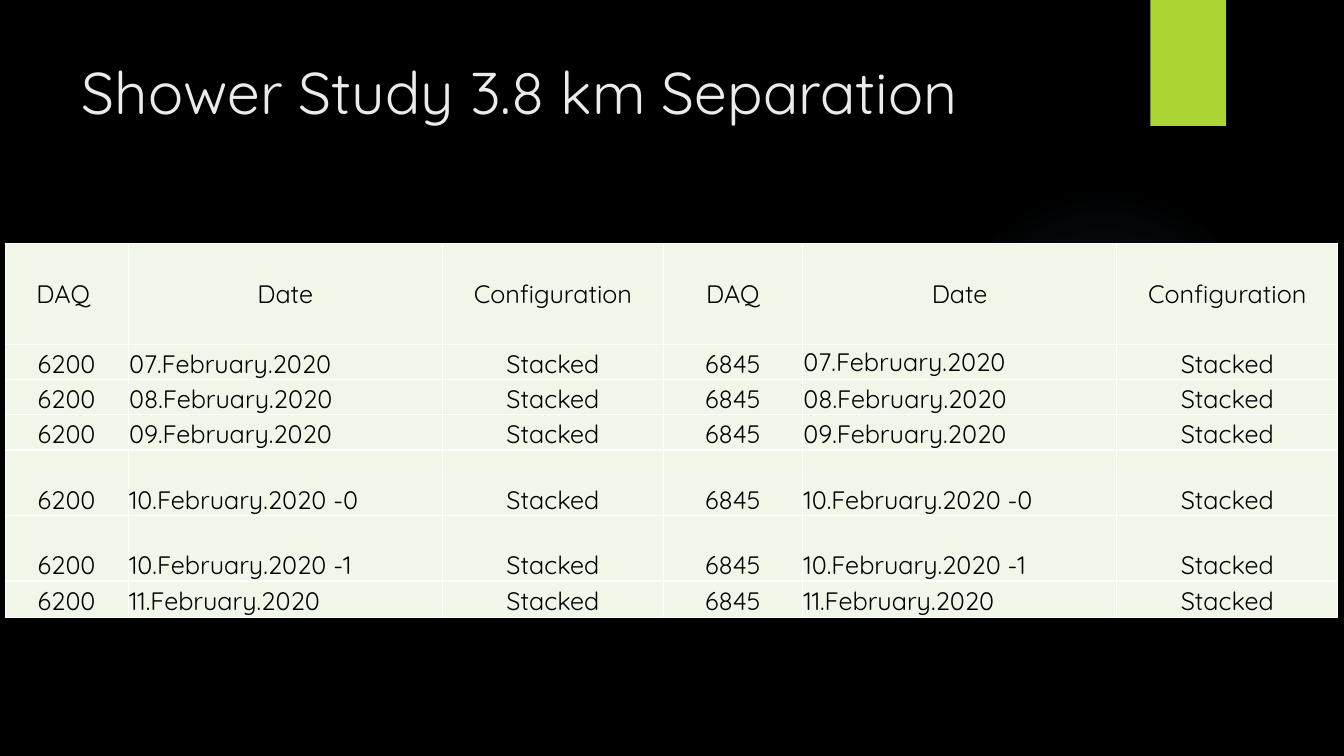
from lxml import etree
from pptx import Presentation
from pptx.dml.color import RGBColor
from pptx.enum.shapes import MSO_SHAPE
from pptx.enum.text import MSO_ANCHOR, PP_ALIGN
from pptx.oxml import parse_xml
from pptx.oxml.ns import nsdecls
from pptx.util import Inches, Pt

ELLIPSE, RECTANGLE = MSO_SHAPE.OVAL, MSO_SHAPE.RECTANGLE
TOP, MIDDLE, BOTTOM = MSO_ANCHOR.TOP, MSO_ANCHOR.MIDDLE, MSO_ANCHOR.BOTTOM
LEFT, CENTER = PP_ALIGN.LEFT, PP_ALIGN.CENTER
TITLE_ONLY = 5

HEADERS = ["DAQ ", "Date", "Configuration", "DAQ", "Date", "Configuration"]
DETECTORS = ["6200", "6845"]
DATES = [
    "07.February.2020",
    "08.February.2020",
    "09.February.2020",
    "10.February.2020 -0",
    "10.February.2020 -1",
    "11.February.2020",
]
DATE_COLUMNS = (1, 4)
COLUMN_SHARES = [9.15, 23.4, 16.43, 10.35, 23.4, 16.43]
ROW_SHARES = [13.33, 4.67, 4.67, 4.67, 8.67, 8.67, 4.8]


def color(value):
    return RGBColor.from_string(value)


class SlideBuilder:
    font_name = "Quicksand"
    background = "000000"
    title_color = "EBEBEB"
    accent = "ACD433"
    glow_color = "7AC4F0"
    cell_color = "F1F7E8"
    border_color = "FFFFFF"
    text_color = "000000"

    def __init__(self, deck):
        self.deck = deck
        self.slide = deck.slides.add_slide(deck.slide_layouts[TITLE_ONLY])
        fill = self.slide.background.fill
        fill.solid()
        fill.fore_color.rgb = color(self.background)

    def across(self, share):
        return round(self.deck.slide_width * share / 100)

    def down(self, share):
        return round(self.deck.slide_height * share / 100)

    def area(self, left, top, width, height):
        return self.across(left), self.down(top), self.across(width), self.down(height)

    def shape(self, kind, *shares):
        shape = self.slide.shapes.add_shape(kind, *self.area(*shares))
        shape.shadow.inherit = False
        shape.line.fill.background()
        return shape

    def block(self, *shares):
        fill = self.shape(RECTANGLE, *shares).fill
        fill.solid()
        fill.fore_color.rgb = color(self.accent)

    def glow(self, stops, *shares):
        shape = self.shape(ELLIPSE, *shares)
        marks = "".join(
            f'<a:gs pos="{place * 1000}"><a:srgbClr val="{self.glow_color}">'
            f'<a:alpha val="{alpha * 1000}"/></a:srgbClr></a:gs>'
            for place, alpha in stops
        )
        gradient = parse_xml(
            f'<a:gradFill {nsdecls("a")} rotWithShape="1"><a:gsLst>{marks}</a:gsLst>'
            '<a:path path="circle"><a:fillToRect l="50000" t="50000" r="50000" b="50000"/>'
            "</a:path></a:gradFill>"
        )
        shape.element.spPr.insert(2, gradient)

    def text(self, frame, words, size, ink, align):
        para = frame.paragraphs[0]
        para.alignment = align
        span = para.add_run()
        span.text = words
        span.font.name = self.font_name
        span.font.size = Pt(size)
        span.font.bold = False
        span.font.color.rgb = color(ink)

    def title(self, words, *shares):
        box = self.slide.shapes.title
        box.left, box.top, box.width, box.height = self.area(*shares)
        box.text_frame.vertical_anchor = TOP
        box.text_frame.word_wrap = True
        self.text(box.text_frame, words, 42, self.title_color, LEFT)
        box.element.getparent().append(box.element)

    def cell(self, cell, words, align, anchor):
        cell.margin_left = cell.margin_right = cell.margin_top = Inches(0.01)
        cell.margin_bottom = 0
        cell.vertical_anchor = anchor
        cell.fill.solid()
        cell.fill.fore_color.rgb = color(self.cell_color)
        self.text(cell.text_frame, words, 18, self.text_color, align)
        properties = cell._tc.get_or_add_tcPr()
        for index, side in enumerate("LRTB"):
            border = parse_xml(f'<a:ln{side} {nsdecls("a")} w="{Pt(1)}"/>')
            fill = etree.SubElement(border, border.tag.replace(f"ln{side}", "solidFill"))
            tint = etree.SubElement(fill, fill.tag.replace("solidFill", "srgbClr"))
            tint.set("val", self.border_color)
            properties.insert(index, border)

    def table(self, rows, left, top):
        shares = left, top, sum(COLUMN_SHARES), sum(ROW_SHARES)
        table = self.slide.shapes.add_table(
            len(ROW_SHARES), len(COLUMN_SHARES), *self.area(*shares)
        ).table
        table.first_row = table.horz_banding = False
        for column, share in zip(table.columns, COLUMN_SHARES):
            column.width = self.across(share)
        for row, share in zip(table.rows, ROW_SHARES):
            row.height = self.down(share)
        for row_index, entries in enumerate(rows):
            for column_index, words in enumerate(entries):
                is_date = row_index > 0 and column_index in DATE_COLUMNS
                is_middle = row_index == 0 or (row_index, column_index) == (1, 4)
                self.cell(
                    table.cell(row_index, column_index),
                    words,
                    LEFT if is_date else CENTER,
                    MIDDLE if is_middle else BOTTOM,
                )


def main():
    deck = Presentation()
    deck.slide_width, deck.slide_height = Inches(13.33), Inches(7.5)
    page = SlideBuilder(deck)
    page.glow([(0, 7), (36, 6), (69, 0)], 70.58, 24.4, 23.1, 41.07)
    page.block(85.6, 0, 5.63, 16.67)
    page.title("Shower Study 3.8 km Separation", 5.33, 6.67, 77.2, 20.4)
    records = [
        [words for detector in DETECTORS for words in (detector, date, "Stacked")]
        for date in DATES
    ]
    page.table([HEADERS] + records, 0.38, 32.2)
    deck.save("out.pptx")


if __name__ == "__main__":
    main()
